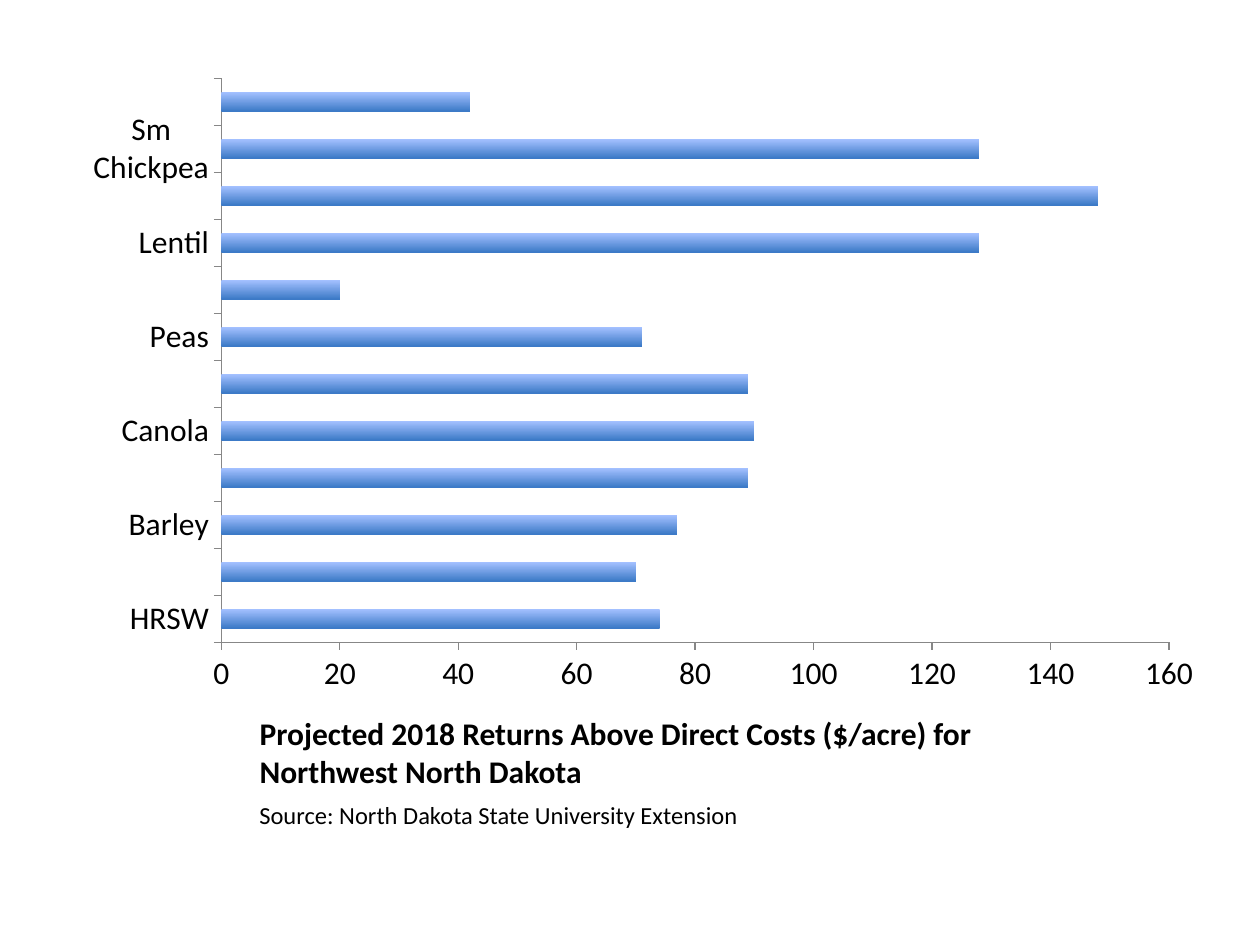
from dataclasses import dataclass

from pptx import Presentation
from pptx.chart.data import CategoryChartData
from pptx.dml.color import RGBColor
from pptx.enum.chart import XL_CHART_TYPE, XL_TICK_MARK
from pptx.enum.text import MSO_ANCHOR, MSO_AUTO_SIZE, PP_ALIGN
from pptx.util import Pt

EMU_PER_PX = 9144  # 100 px to the inch

RETURNS = {
    "HRSW": 74,
    "Durum": 70,
    "Barley": 77,
    "Corn": 89,
    "Canola": 90,
    "Flax": 89,
    "Peas": 71,
    "Oats": 20,
    "Lentil": 128,
    "Mustard": 148,
    "Sm Chickpea": 128,
    "HRWW": 42,
}


def px(*lengths):
    return [length * EMU_PER_PX for length in lengths]


def color(hex_string):
    return RGBColor.from_string(hex_string)


@dataclass
class SlideBuilder:
    page: object
    font_name: str = "Calibri"
    text_color: str = "000000"
    axis_color: str = "878787"
    bar_top: str = "A3C0FF"
    bar_bottom: str = "3C7AC7"

    def style_font(self, font, size, bold=False):
        font.name = self.font_name
        font.size = Pt(size)
        font.bold = bold
        font.color.rgb = color(self.text_color)

    def fill_frame(self, box, text, size, anchor, bold=False):
        frame = box.text_frame
        frame.text = text
        frame.word_wrap = True
        frame.auto_size = MSO_AUTO_SIZE.NONE
        frame.vertical_anchor = anchor
        para = frame.paragraphs[0]
        para.alignment = PP_ALIGN.LEFT
        for span in para.runs:
            self.style_font(span.font, size, bold)
        return para

    def title(self, text, left, top, width, height):
        box = self.page.shapes.title
        box.left, box.top, box.width, box.height = px(left, top, width, height)
        self.fill_frame(box, text, 18, MSO_ANCHOR.BOTTOM, bold=True)

    def text(self, text, left, top, width, height):
        box = self.page.shapes.add_textbox(*px(left, top, width, height))
        self.fill_frame(box, text, 14, MSO_ANCHOR.TOP)

    def style_axis(self, axis):
        axis.has_major_gridlines = False
        axis.major_tick_mark = XL_TICK_MARK.OUTSIDE
        axis.minor_tick_mark = XL_TICK_MARK.NONE
        axis.format.line.color.rgb = color(self.axis_color)
        axis.format.line.width = Pt(0.75)

    def bar_chart(self, values, left, top, width, height):
        data = CategoryChartData(number_format="0")
        data.categories = list(values)
        data.add_series("Series 1", list(values.values()))
        chart = self.page.shapes.add_chart(
            XL_CHART_TYPE.BAR_CLUSTERED, *px(left, top, width, height), data
        ).chart
        chart.has_legend = False
        chart.has_title = False
        self.style_font(chart.font, 18)
        self.style_axis(chart.category_axis)
        self.style_axis(chart.value_axis)
        chart.value_axis.tick_labels.number_format = "0"
        chart.value_axis.tick_labels.number_format_is_linked = False

        plot = chart.plots[0]
        plot.gap_width = 150
        plot.vary_by_categories = False
        fill = plot.series[0].format.fill
        fill.gradient()
        fill.gradient_angle = 270
        for stop, shade in zip(fill.gradient_stops, (self.bar_top, self.bar_bottom)):
            stop.color.rgb = color(shade)


def main():
    deck = Presentation()
    deck.slide_width, deck.slide_height = px(1000, 750)
    builder = SlideBuilder(deck.slides.add_slide(deck.slide_layouts[5]))
    builder.title(
        "Projected 2018 Returns Above Direct Costs ($/acre) for Northwest North Dakota",
        196, 570, 600, 62,
    )
    builder.text("Source: North Dakota State University Extension", 196, 630, 600, 88)
    builder.bar_chart(RETURNS, 56, 52, 909, 508)
    deck.save("out.pptx")


if __name__ == "__main__":
    main()
